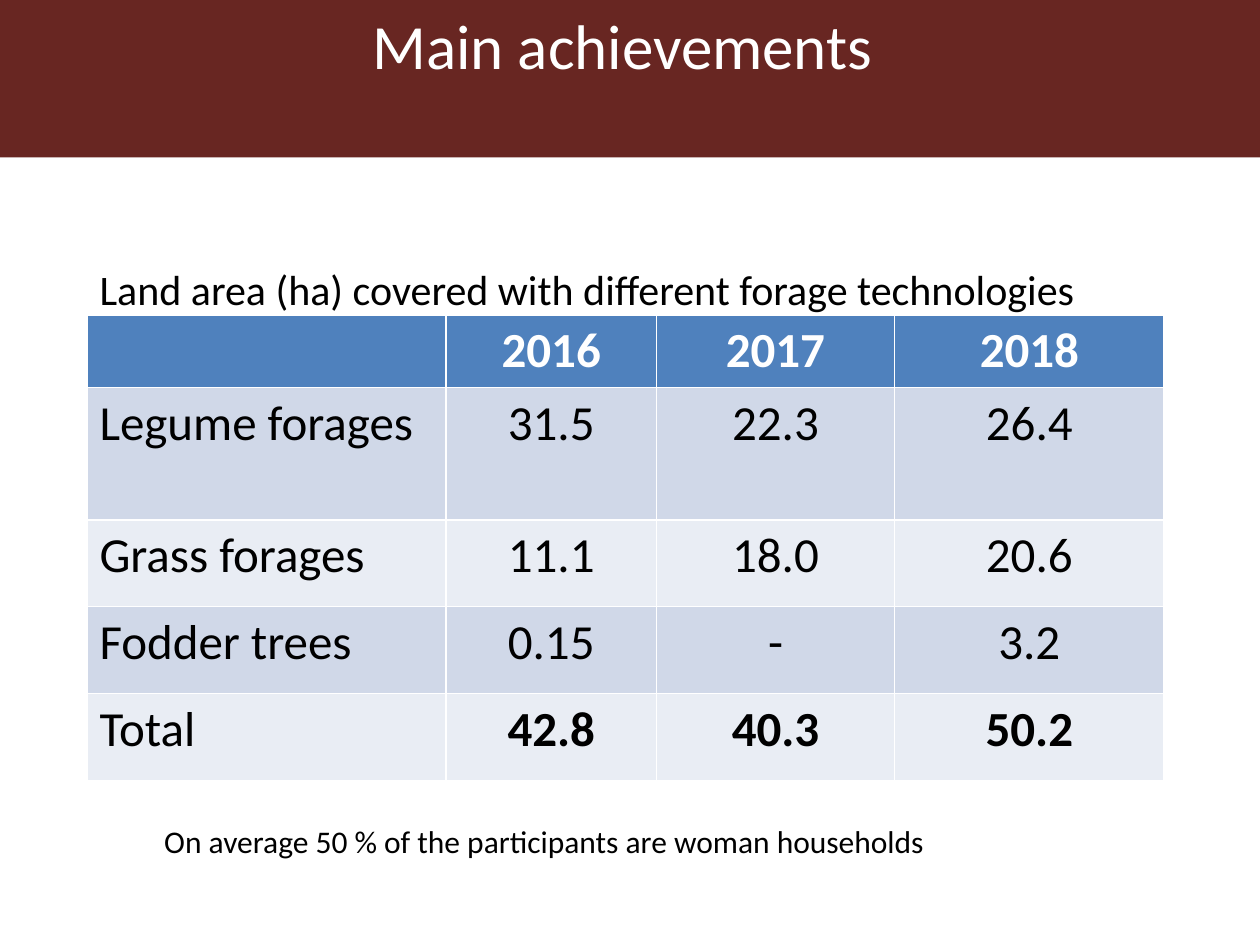
from typing import NamedTuple

import pptx
import pptx.dml.color
import pptx.enum.shapes
import pptx.enum.text
import pptx.oxml
import pptx.util

Inches = pptx.util.Inches
Pt = pptx.util.Pt
ALIGN = pptx.enum.text.PP_ALIGN
COLORS = {
    "band": "682622",
    "head": "4F81BD",
    "odd": "D0D8E8",
    "even": "E9EDF4",
    "white": "FFFFFF",
    "black": "000000",
}


class Row(NamedTuple):
    label: str
    values: tuple[str, ...]
    height: float
    bold: bool = False


ROWS = [
    Row("", ("2016", "2017", "2018"), 0.5, True),
    Row("Legume forages", ("31.5", "22.3", "26.4"), 1.05),
    Row("Grass forages", ("11.1", "18.0", "20.6"), 0.69),
    Row("Fodder trees", ("0.15", "-", "3.2"), 0.69),
    Row("Total", ("42.8", "40.3", "50.2"), 0.69, True),
]
WIDTHS = (2.85, 1.67, 1.89, 2.14)


def rgb(name: str):
    return pptx.dml.color.RGBColor.from_string(COLORS[name])


def write(frame, text: str, *, size: int, color: str = "black",
          align=ALIGN.LEFT, bold: bool = False, spacing=None, after: int = 0):
    para = frame.paragraphs[0]
    para.text = text
    para.alignment = align
    para.space_before = Pt(0)
    para.space_after = Pt(after)
    if spacing:
        para.line_spacing = spacing
    font = para.runs[0].font
    font.name, font.size, font.bold = "Calibri", Pt(size), bold
    font.color.rgb = rgb(color)
    return para


def place(shape, left: float, top: float, width: float, height: float):
    """Move a placeholder and set its text at the top."""
    shape.left, shape.top = Inches(left), Inches(top)
    shape.width, shape.height = Inches(width), Inches(height)
    frame = shape.text_frame
    frame.word_wrap = True
    frame.auto_size = pptx.enum.text.MSO_AUTO_SIZE.NONE
    frame.vertical_anchor = pptx.enum.text.MSO_ANCHOR.TOP
    return frame


def plain(para) -> None:
    """Drop the bullet and its indent."""
    props = para._p.get_or_add_pPr()
    props.set("marL", "0")
    props.set("indent", "0")
    props.append(pptx.oxml.parse_xml(
        '<a:buNone xmlns:a="http://schemas.openxmlformats.org/drawingml/2006/main"/>'))


def add_band(slide) -> None:
    band = slide.shapes.add_shape(
        pptx.enum.shapes.MSO_SHAPE.RECTANGLE, 0, 0, Inches(10), Inches(1.25))
    band.shadow.inherit = False
    band.fill.solid()
    band.fill.fore_color.rgb = rgb("band")
    band.line.fill.background()
    slide.shapes.title._element.addprevious(band._element)


def add_grid(slide, rows: list[Row]) -> None:
    grid = slide.shapes.add_table(
        len(rows), len(WIDTHS), Inches(0.69), Inches(2.5),
        Inches(sum(WIDTHS)), Inches(sum(row.height for row in rows))).table
    for col, width in zip(grid.columns, WIDTHS):
        col.width = Inches(width)
    for i, row in enumerate(rows):
        grid.rows[i].height = Inches(row.height)
        fill = "head" if i == 0 else "odd" if i % 2 else "even"
        for j, text in enumerate((row.label, *row.values)):
            cell = grid.cell(i, j)
            cell.fill.solid()
            cell.fill.fore_color.rgb = rgb(fill)
            if text:
                write(cell.text_frame, text, size=28,
                      color="black" if i else "white",
                      align=ALIGN.CENTER if j else ALIGN.LEFT,
                      bold=row.bold and j > 0)


def main() -> None:
    deck = pptx.Presentation()
    deck.slide_width, deck.slide_height = Inches(10), Inches(7.5)
    slide = deck.slides.add_slide(deck.slide_layouts[1])
    add_band(slide)

    title = place(slide.shapes.title, 0.44, 0, 9, 1.25)
    write(title, "Main achievements", size=36, color="white", align=ALIGN.CENTER)

    body = place(slide.placeholders[1], 0.69, 1.64, 9, 0.83)
    plain(write(body, "Land area (ha) covered with different forage technologies",
                size=24, spacing=2.0, after=12))

    add_grid(slide, ROWS)

    note = slide.shapes.add_textbox(
        Inches(1.11), Inches(6.33), Inches(6.42), Inches(0.5)).text_frame
    note.word_wrap = True
    write(note, "On average 50 % of the participants are woman households",
          size=18, align=ALIGN.CENTER, spacing=Pt(32))

    deck.save("out.pptx")


if __name__ == "__main__":
    main()
